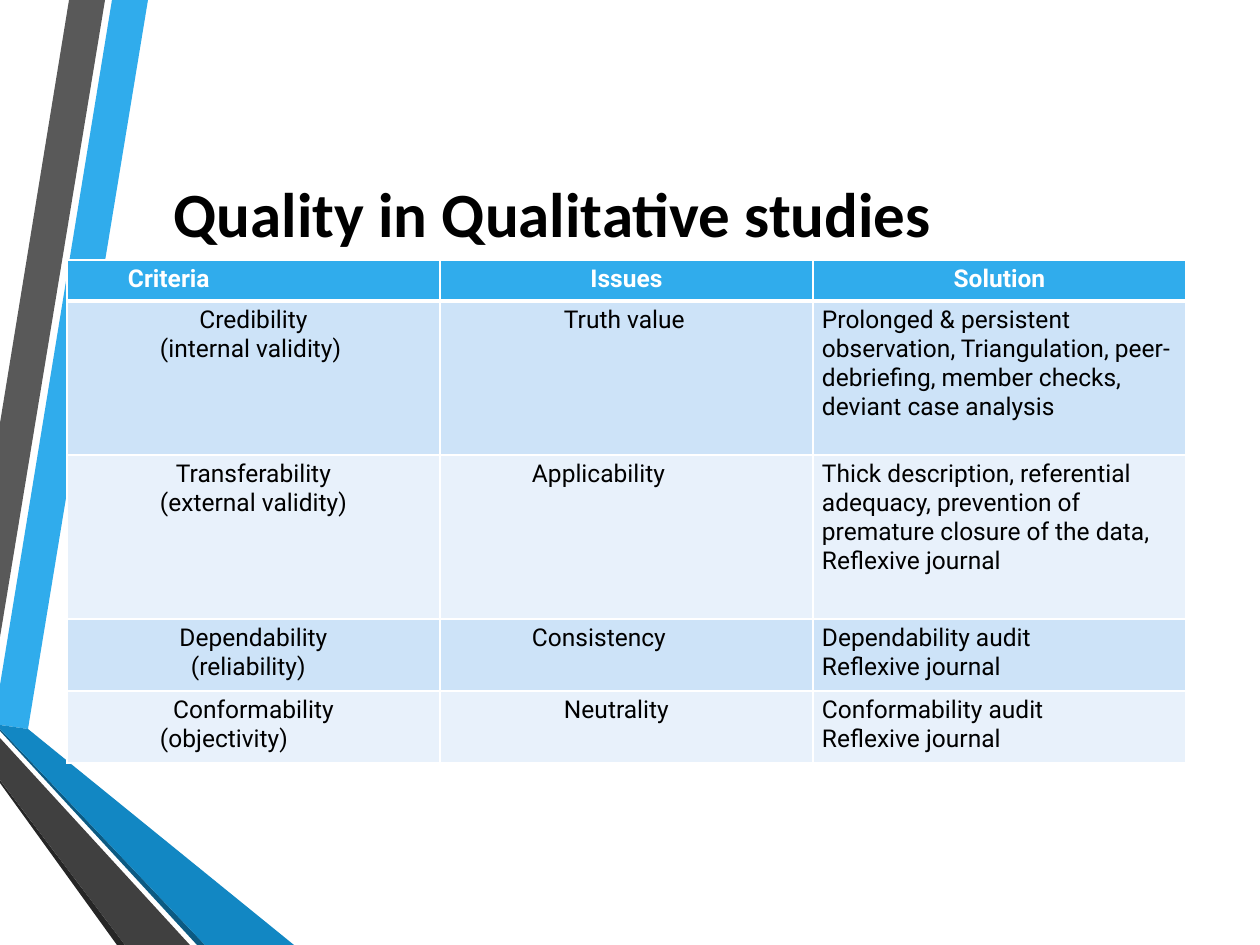
from lxml.etree import SubElement
from pptx import Presentation
from pptx.dml.color import RGBColor
from pptx.enum.text import MSO_ANCHOR, PP_ALIGN
from pptx.oxml.ns import qn
from pptx.util import Pt

PX = 914400 / 126
WHITE, BLACK = "FFFFFF", "000000"
HEADER_FILL, BAND_FILLS = "30ACEC", ("CDE3F8", "E8F1FB")

TITLE = "Quality in Qualitative studies"
CENTER = None
TABLE = [
    [[("Criteria", 52)], [("Issues", CENTER)], [("Solution", CENTER)]],
    [[("Credibility", CENTER), ("(internal validity)", 84)],
     [("Truth value", 115)],
     [("Prolonged & persistent observation, Triangulation, peer-debriefing, "
       "member checks, deviant case analysis", 0)]],
    [[("Transferability", CENTER), ("(external validity)", 84)],
     [("Applicability", 83)],
     [("Thick description, referential adequacy, prevention of premature "
       "closure of the data, Reflexive journal", 0)]],
    [[("Dependability", CENTER), ("(reliability)", 115)],
     [("Consistency", 83)],
     [("Dependability audit", 0), ("Reflexive journal", 0)]],
    [[("Conformability", CENTER), ("(objectivity)", 84)],
     [("Neutrality", 115)],
     [("Conformability audit", 0), ("Reflexive journal", 0)]],
]
TABLE_LEFT, TABLE_TOP, COLUMN_WIDTH = 67, 260, 373
ROW_HEIGHTS = [41, 154, 164, 72, 72]
RIBBONS = [
    ("30ACEC", [(0, 685), (0, 725), (28, 729), (148, 0), (112, 0)]),
    ("595959", [(105, 0), (69, 0), (0, 423), (0, 637)]),
    ("262626", [(0, 780), (0, 783), (117, 945), (125, 945)]),
    ("0C5A82", [(0, 729), (0, 731), (197, 945), (205, 945)]),
    ("1287C3", [(0, 729), (205, 945), (294, 945), (28, 729), (0, 725)]),
    ("404040", [(0, 780), (125, 945), (190, 945), (0, 738)]),
]


def px(value):
    return round(value * PX)


def color(hex_string):
    return RGBColor.from_string(hex_string)


def write(paragraph, text, font="Roboto", size=14, fill=BLACK, bold=False, indent=CENTER):
    paragraph.alignment = PP_ALIGN.CENTER if indent is CENTER else PP_ALIGN.LEFT
    if indent:
        paragraph._p.get_or_add_pPr().set("marL", str(px(indent)))
    run = paragraph.add_run()
    run.text = text
    run.font.name, run.font.size, run.font.bold = font, Pt(size), bold
    run.font.color.rgb = color(fill)


def add_ribbon(slide, fill, points):
    builder = slide.shapes.build_freeform(*points[0], scale=PX)
    builder.add_line_segments(points[1:], close=True)
    shape = builder.convert_to_shape()
    shape.shadow.inherit = False
    shape.fill.solid()
    shape.fill.fore_color.rgb = color(fill)
    shape.line.fill.background()


def set_borders(cell, **widths):
    properties = cell._tc.get_or_add_tcPr()
    for position, side in enumerate("LRTB"):
        line = SubElement(properties, qn(f"a:ln{side}"), w=str(Pt(widths.get(side, 1))))
        fill = SubElement(line, qn("a:solidFill"))
        SubElement(fill, qn("a:srgbClr"), val=WHITE)
        properties.insert(position, line)


def add_criteria_table(slide):
    columns = len(TABLE[0])
    table = slide.shapes.add_table(
        len(TABLE), columns, px(TABLE_LEFT), px(TABLE_TOP),
        px(COLUMN_WIDTH * columns), px(sum(ROW_HEIGHTS))).table
    table.horz_banding = False
    for column in table.columns:
        column.width = px(COLUMN_WIDTH)
    for row, (contents, height) in enumerate(zip(TABLE, ROW_HEIGHTS)):
        table.rows[row].height = px(height)
        header = row == 0
        for column, lines in enumerate(contents):
            cell = table.cell(row, column)
            cell.margin_left = cell.margin_right = px(9)
            cell.margin_top = cell.margin_bottom = px(5)
            cell.fill.solid()
            cell.fill.fore_color.rgb = color(HEADER_FILL if header else BAND_FILLS[(row - 1) % 2])
            set_borders(cell, T=3 if row == 1 else 1, B=3 if header else 1)
            for index, (text, indent) in enumerate(lines):
                frame = cell.text_frame
                paragraph = frame.add_paragraph() if index else frame.paragraphs[0]
                write(paragraph, text, fill=WHITE if header else BLACK,
                      bold=header, indent=indent)


def main():
    presentation = Presentation()
    presentation.slide_width, presentation.slide_height = px(1260), px(945)
    slide = presentation.slides.add_slide(presentation.slide_layouts[5])
    for fill, points in RIBBONS:
        add_ribbon(slide, fill, points)
    title = slide.shapes.title
    title.left, title.top, title.width, title.height = map(px, (67, 165, 971, 95))
    title.text_frame.vertical_anchor = MSO_ANCHOR.MIDDLE
    write(title.text_frame.paragraphs[0], TITLE, font="Calibri", size=36, bold=True)
    add_criteria_table(slide)
    presentation.save("out.pptx")


if __name__ == "__main__":
    main()
